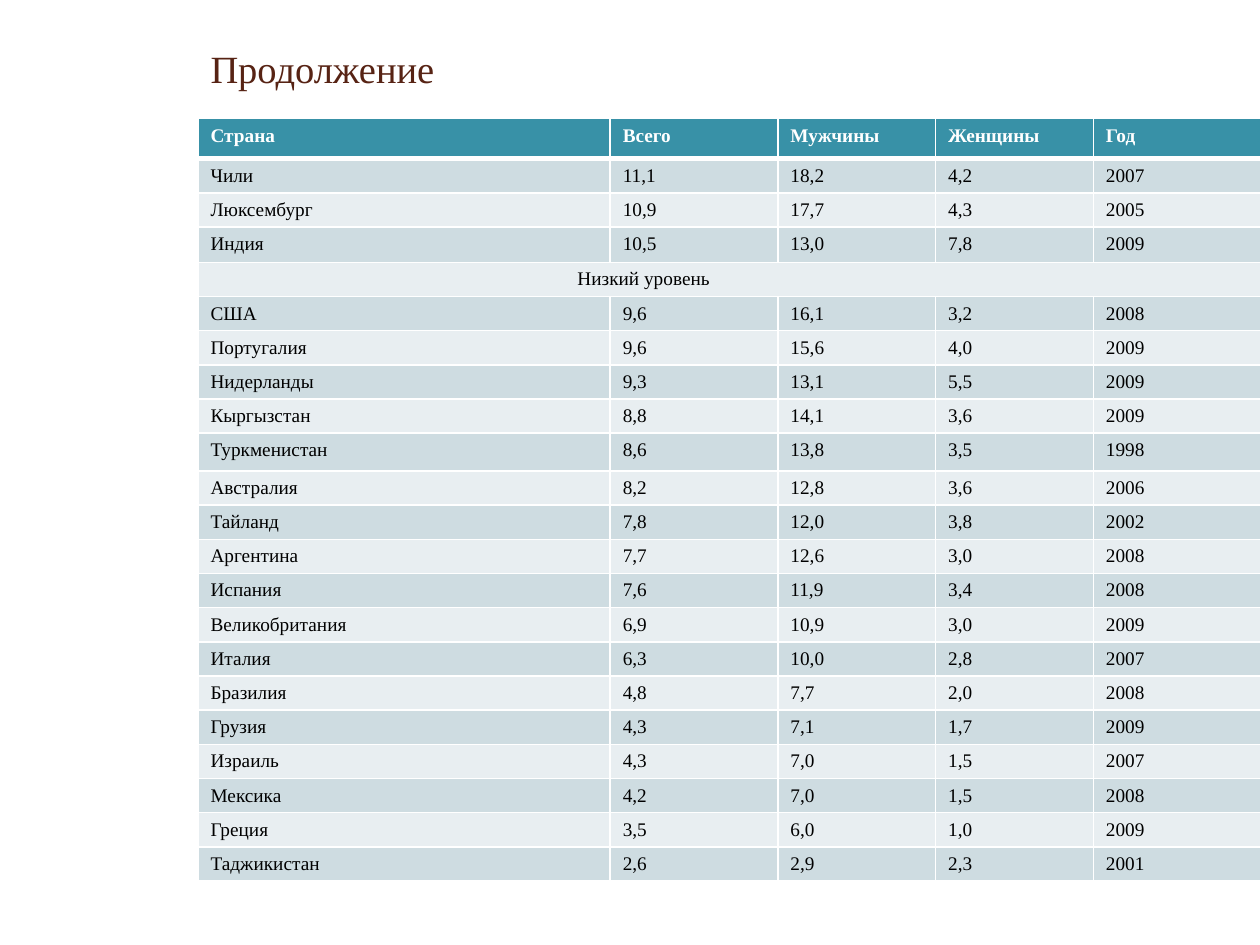
import dataclasses

import pptx
import pptx.dml.color
import pptx.enum.text
import pptx.oxml
import pptx.oxml.ns
import pptx.util

Cm = pptx.util.Cm
Pt = pptx.util.Pt


@dataclasses.dataclass(frozen=True)
class Theme:
    font: str = "Times New Roman"
    title: str = "572314"
    head: str = "3891A7"
    bands: tuple = ("CEDCE1", "E8EEF1")
    light: str = "FFFFFF"
    dark: str = "000000"
    title_size: int = 22
    cell_size: int = 11
    thin: int = 1
    thick: int = 3


THEME = Theme()

# Table content
HEAD = ("Страна", "Всего", "Мужчины", "Женщины", "Год")
GROUP = "Низкий уровень"
MIDDLE = (
    ("Чили", "11,1", "18,2", "4,2", "2007"),
    ("Люксембург", "10,9", "17,7", "4,3", "2005"),
    ("Индия", "10,5", "13,0", "7,8", "2009"),
)
LOW = (
    ("США", "9,6", "16,1", "3,2", "2008"),
    ("Португалия", "9,6", "15,6", "4,0", "2009"),
    ("Нидерланды", "9,3", "13,1", "5,5", "2009"),
    ("Кыргызстан", "8,8", "14,1", "3,6", "2009"),
    ("Туркменистан", "8,6", "13,8", "3,5", "1998"),
    ("Австралия", "8,2", "12,8", "3,6", "2006"),
    ("Тайланд", "7,8", "12,0", "3,8", "2002"),
    ("Аргентина", "7,7", "12,6", "3,0", "2008"),
    ("Испания", "7,6", "11,9", "3,4", "2008"),
    ("Великобритания", "6,9", "10,9", "3,0", "2009"),
    ("Италия", "6,3", "10,0", "2,8", "2007"),
    ("Бразилия", "4,8", "7,7", "2,0", "2008"),
    ("Грузия", "4,3", "7,1", "1,7", "2009"),
    ("Израиль", "4,3", "7,0", "1,5", "2007"),
    ("Мексика", "4,2", "7,0", "1,5", "2008"),
    ("Греция", "3,5", "6,0", "1,0", "2009"),
    ("Таджикистан", "2,6", "2,9", "2,3", "2001"),
)
ROWS = (HEAD, *MIDDLE, (GROUP,), *LOW)

# Table grid in centimetres
LEFT, WIDE = 3.99, 20.83
COLS = (8.31, 3.38, 3.18, 3.18, 2.79)
ROW = 0.69
TALL = {"Страна": 0.81, "Индия": 0.71, "Туркменистан": 0.76}
GROUP_INSET = 7.65


def rgb(code):
    return pptx.dml.color.RGBColor.from_string(code)


def put_text(frame, text, *, size, color, bold=False):
    para = frame.paragraphs[0]
    para.alignment = pptx.enum.text.PP_ALIGN.LEFT
    run = para.add_run()
    run.text = text
    font = run.font
    font.name = THEME.font
    font.size = Pt(size)
    font.bold = bold
    font.color.rgb = rgb(color)


def set_edges(cell, top, bottom):
    props = cell._tc.get_or_add_tcPr()
    space = pptx.oxml.ns.nsdecls("a")
    sides = {"L": THEME.thin, "R": THEME.thin, "T": top, "B": bottom}
    for side, width in sides.items():
        props.append(pptx.oxml.parse_xml(
            f'<a:ln{side} {space} w="{Pt(width)}"><a:solidFill>'
            f'<a:srgbClr val="{THEME.light}"/></a:solidFill></a:ln{side}>'))


def add_title(slide, text):
    title = slide.shapes.title
    title.left, title.top = Cm(LEFT), Cm(0.76)
    title.width, title.height = Cm(WIDE), Cm(1.22)
    title.text_frame.vertical_anchor = pptx.enum.text.MSO_ANCHOR.MIDDLE
    put_text(title.text_frame, text, size=THEME.title_size, color=THEME.title)


def style_cell(cell, row):
    # The heavy rule lies between the heading and the first country
    set_edges(cell,
              THEME.thick if row == 1 else THEME.thin,
              THEME.thick if row == 0 else THEME.thin)
    cell.fill.solid()
    fill = THEME.bands[(row - 1) % 2] if row else THEME.head
    cell.fill.fore_color.rgb = rgb(fill)


def add_table(slide):
    highs = [TALL.get(row[0], ROW) for row in ROWS]
    table = slide.shapes.add_table(
        len(ROWS), len(COLS), Cm(LEFT), Cm(2.39),
        Cm(WIDE), Cm(sum(highs))).table
    table.horz_banding = False
    for col, width in zip(table.columns, COLS):
        col.width = Cm(width)
    for i, (texts, high) in enumerate(zip(ROWS, highs)):
        table.rows[i].height = Cm(high)
        cells = table.rows[i].cells
        for cell in cells:
            style_cell(cell, i)
        # A lone text is a group heading across all columns
        if len(texts) == 1:
            table.cell(i, 0).merge(table.cell(i, len(COLS) - 1))
            table.cell(i, 0).margin_left = Cm(GROUP_INSET)
        for cell, text in zip(cells, texts):
            put_text(cell.text_frame, text, size=THEME.cell_size,
                     color=THEME.dark if i else THEME.light, bold=i == 0)


def main():
    deck = pptx.Presentation()
    deck.slide_width, deck.slide_height = Cm(25.4), Cm(19.05)
    slide = deck.slides.add_slide(deck.slide_layouts[5])
    add_title(slide, "Продолжение")
    add_table(slide)
    deck.save("out.pptx")


if __name__ == "__main__":
    main()
